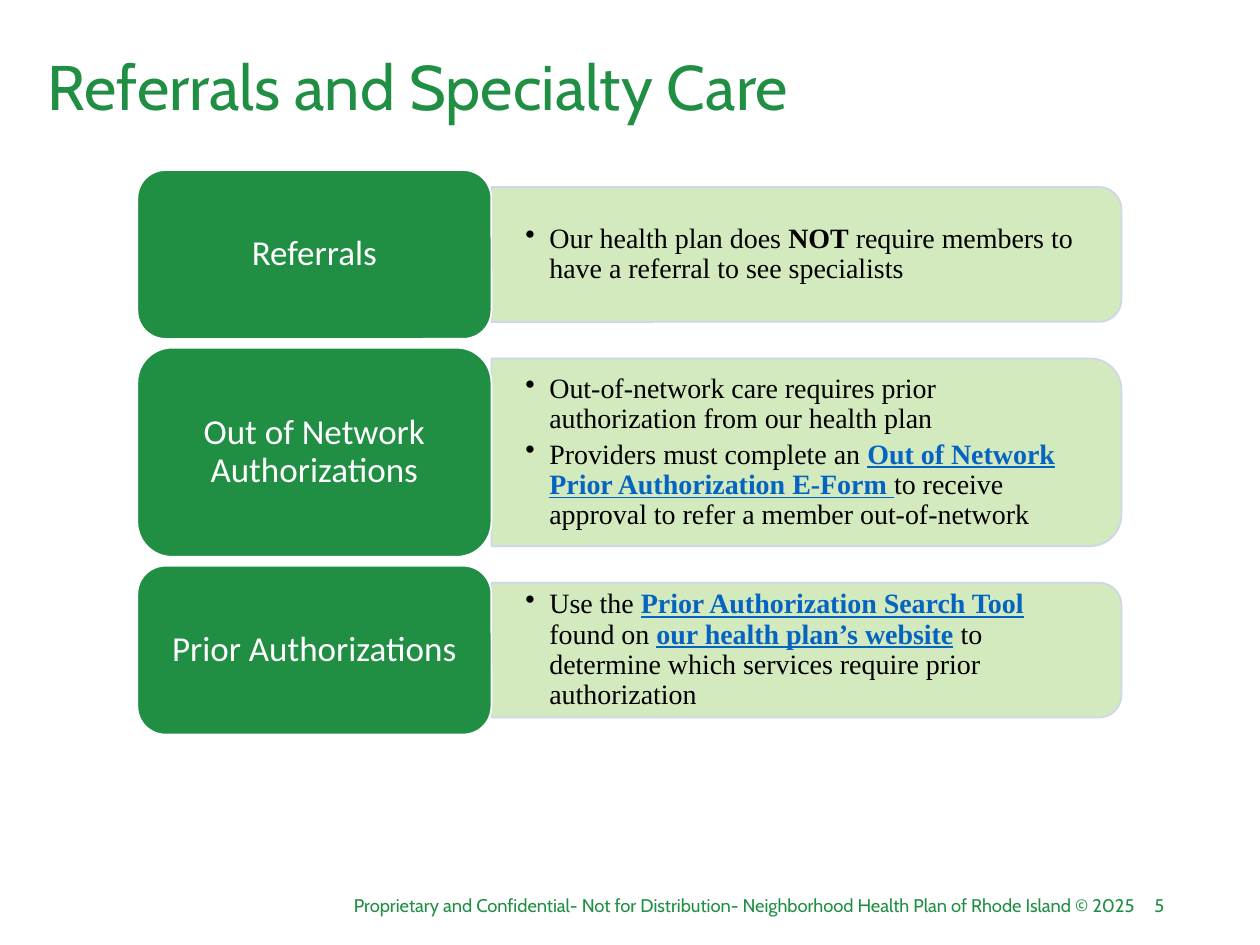
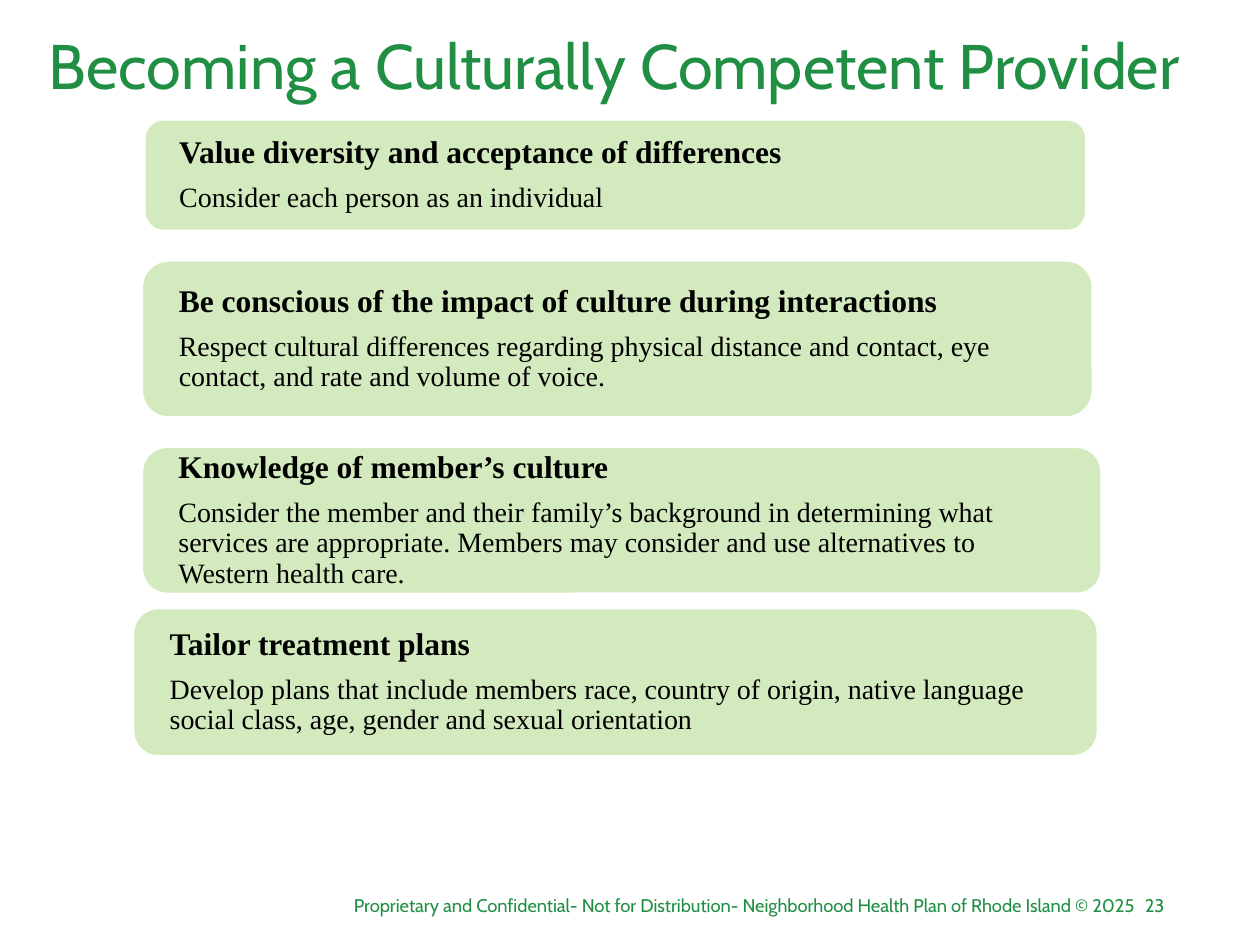
"""Build two health plan slides: referral rules and culturally competent care."""
from lxml import etree
from pptx import Presentation
from pptx.dml.color import RGBColor as RGB
from pptx.enum.shapes import MSO_SHAPE as SHAPE
from pptx.enum.text import MSO_ANCHOR as ANCHOR, MSO_AUTO_SIZE as FIT, PP_ALIGN as ALIGN
from pptx.oxml.ns import qn
from pptx.util import Inches, Pt

THEME = {
    "green": "208F44", "light": "7FC242", "edge": "CFD5EA", "white": "FFFFFF",
    "black": "000000", "blue": "0563C1",
    "title": ("Cabin", 36, "green"), "foot": ("Cabin", 10.5, "green"),
    "label": ("Calibri", 20, "white"), "head": ("Times New Roman", 18, "black"),
    "body": ("Times New Roman", 16, "black"),
}
MARKS = {
    "plain": {},
    "bold": {"bold": True},
    "link": {"bold": True, "underline": True},
}

FOOTER = ("Proprietary and Confidential- Not for Distribution- "
          "Neighborhood Health Plan of Rhode Island © 2025")

CARE = {
    "title": "Referrals and Specialty Care", "page": "5",
    "box": (0.28, 0.17, 8.62, 1.09), "align": ALIGN.LEFT,
}
CARE_ROWS = [
    ("Referrals", 1.34, 1.07, [
        [("Our health plan does ", "plain"), ("NOT", "bold"),
         (" require members to have a referral to see specialists", "plain")],
    ]),
    ("Out of Network Authorizations", 1.66, 1.49, [
        [("Out-of-network care requires prior authorization from our health plan", "plain")],
        [("Providers must complete an ", "plain"),
         ("Out of Network Prior Authorization E-Form ", "link"),
         ("to receive approval to refer a member out-of-network", "plain")],
    ]),
    ("Prior Authorizations", 1.34, 1.07, [
        [("Use the ", "plain"), ("Prior Authorization Search Tool ", "link"),
         ("found on ", "plain"), ("our health plan’s website", "link"),
         (" to determine which services require prior authorization", "plain")],
    ]),
]
ROW_LEFT, ROW_TOP, ROW_GAP, LABEL_WIDE, PANEL_WIDE = 1.09, 1.35, 0.07, 2.81, 5

CULTURE = {
    "title": "Becoming a Culturally Competent Provider", "page": "23",
    "box": (0.19, 0.06, 9.37, 0.98), "align": ALIGN.CENTER,
}
CARDS = [
    ((1.15, 0.95, 7.47, 0.88), "Value diversity and acceptance of differences",
     "Consider each person as an individual"),
    ((1.13, 2.07, 7.54, 1.24), "Be conscious of the impact of culture during interactions",
     "Respect cultural differences regarding physical distance and contact, "
     "eye contact, and rate and volume of voice."),
    ((1.13, 3.55, 7.61, 1.16), "Knowledge of member’s culture",
     "Consider the member and their family’s background in determining what services "
     "are appropriate. Members may consider and use alternatives to Western health care."),
    ((1.06, 4.83, 7.65, 1.17), "Tailor treatment plans",
     "Develop plans that include members race, country of origin, native language "
     "social class, age, gender and sexual orientation"),
]


def apply(item, values):
    for name, value in values.items():
        setattr(item, name, value)


def tint(name):
    return RGB.from_string(THEME[name])


def fade(paint, share):
    for color in paint.iter(qn("a:srgbClr")):
        etree.SubElement(color, qn("a:alpha"), val=str(share * 1000))


def frame(shape, side=0.1, edge=0.05, anchor=ANCHOR.MIDDLE):
    text = shape.text_frame
    apply(text, {
        "word_wrap": True, "auto_size": FIT.NONE, "vertical_anchor": anchor,
        "margin_left": Inches(side), "margin_right": Inches(side),
        "margin_top": Inches(edge), "margin_bottom": Inches(edge),
    })
    return text


def write(para, runs, style, **format):
    apply(para, format)
    face, size, color = THEME[style]
    for words, mark in runs:
        run = para.add_run()
        run.text = words
        apply(run.font, {"name": face, "size": Pt(size), **MARKS[mark]})
        run.font.color.rgb = tint("blue" if mark == "link" else color)


def next_para(text, index):
    return text.add_paragraph() if index else text.paragraphs[0]


def add_block(slide, kind, box, fill, line):
    shape = slide.shapes.add_shape(kind, *map(Inches, box))
    shape.shadow.inherit = False
    shape.fill.solid()
    shape.fill.fore_color.rgb = tint(fill)
    if fill == "light":
        fade(shape._element.spPr, 34)
    shape.line.color.rgb = tint(line)
    shape.line.width = Pt(1)
    return shape


def add_text(slide, box):
    return slide.shapes.add_textbox(*map(Inches, box))


def add_page(deck, page):
    slide = deck.slides.add_slide(deck.slide_layouts[5])
    title = slide.shapes.title
    apply(title, dict(zip(("left", "top", "width", "height"), map(Inches, page["box"]))))
    write(frame(title).paragraphs[0], [(page["title"], "plain")], "title",
          alignment=page["align"], line_spacing=0.9)
    for words, left, width in ((page["page"], 8.88, 0.46), (FOOTER, 2.5, 6.61)):
        foot = add_text(slide, (left, 7.05, width, 0.28))
        write(frame(foot, anchor=ANCHOR.TOP).paragraphs[0], [(words, "plain")], "foot",
              alignment=ALIGN.RIGHT)
    return slide


def add_bullet(para):
    props = para._p.get_or_add_pPr()
    props.set("marL", str(Inches(0.19)))
    props.set("indent", str(-Inches(0.19)))
    etree.SubElement(props, qn("a:buChar"), char="•")


def add_row(slide, top, label, tall, depth, points):
    left, mid = ROW_LEFT + LABEL_WIDE, top + tall / 2
    turned = (left + (PANEL_WIDE - depth) / 2, mid - PANEL_WIDE / 2, depth, PANEL_WIDE)
    panel = add_block(slide, SHAPE.ROUND_2_SAME_RECTANGLE, turned, "light", "edge")
    panel.rotation = 90
    note = add_text(slide, (left, mid - depth / 2, PANEL_WIDE - 0.05, depth))
    text = frame(note, 0.27, 0)
    for index, runs in enumerate(points):
        para = next_para(text, index)
        add_bullet(para)
        write(para, runs, "body", line_spacing=0.9, space_before=Pt(3 if index else 0))
    block = add_block(slide, SHAPE.ROUNDED_RECTANGLE,
                      (ROW_LEFT, top, LABEL_WIDE, tall), "green", "white")
    write(frame(block, 0.08, 0.04).paragraphs[0], [(label, "plain")], "label",
          alignment=ALIGN.CENTER, line_spacing=0.9)


def add_card(slide, box, head, body):
    card = add_block(slide, SHAPE.ROUNDED_RECTANGLE, box, "light", "white")
    text = frame(card, 0.23, 0)
    parts = ((head, "bold", "head", 0), (body, "plain", "body", 7.5))
    for index, (words, mark, style, space) in enumerate(parts):
        write(next_para(text, index), [(words, mark)], style,
              alignment=ALIGN.LEFT, line_spacing=0.9, space_before=Pt(space))


def main():
    deck = Presentation()
    apply(deck, {"slide_width": Inches(10), "slide_height": Inches(7.5)})
    slide, top = add_page(deck, CARE), ROW_TOP
    for label, tall, depth, points in CARE_ROWS:
        add_row(slide, top, label, tall, depth, points)
        top += tall + ROW_GAP
    slide = add_page(deck, CULTURE)
    for card in CARDS:
        add_card(slide, *card)
    deck.save("out.pptx")


if __name__ == "__main__":
    main()
